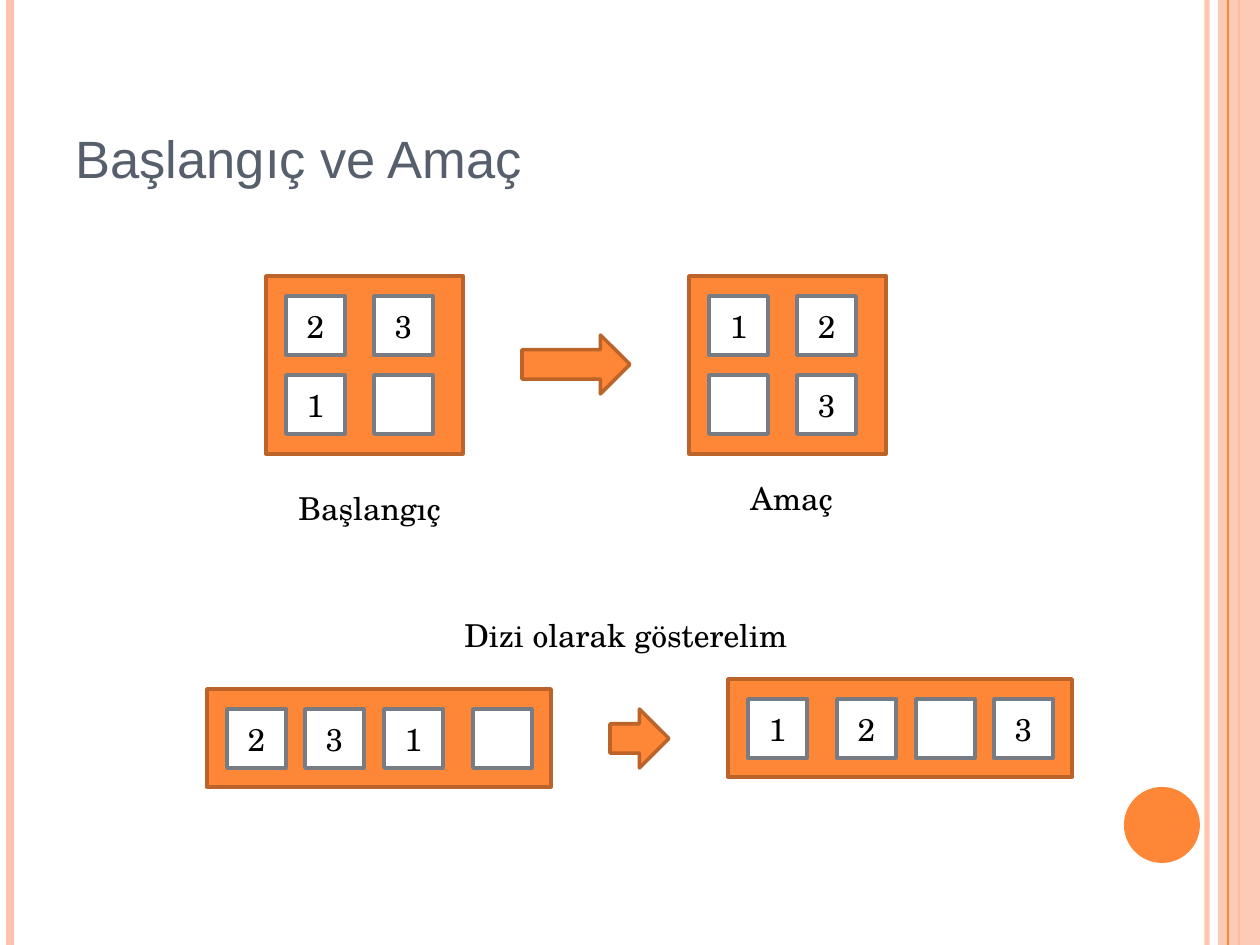
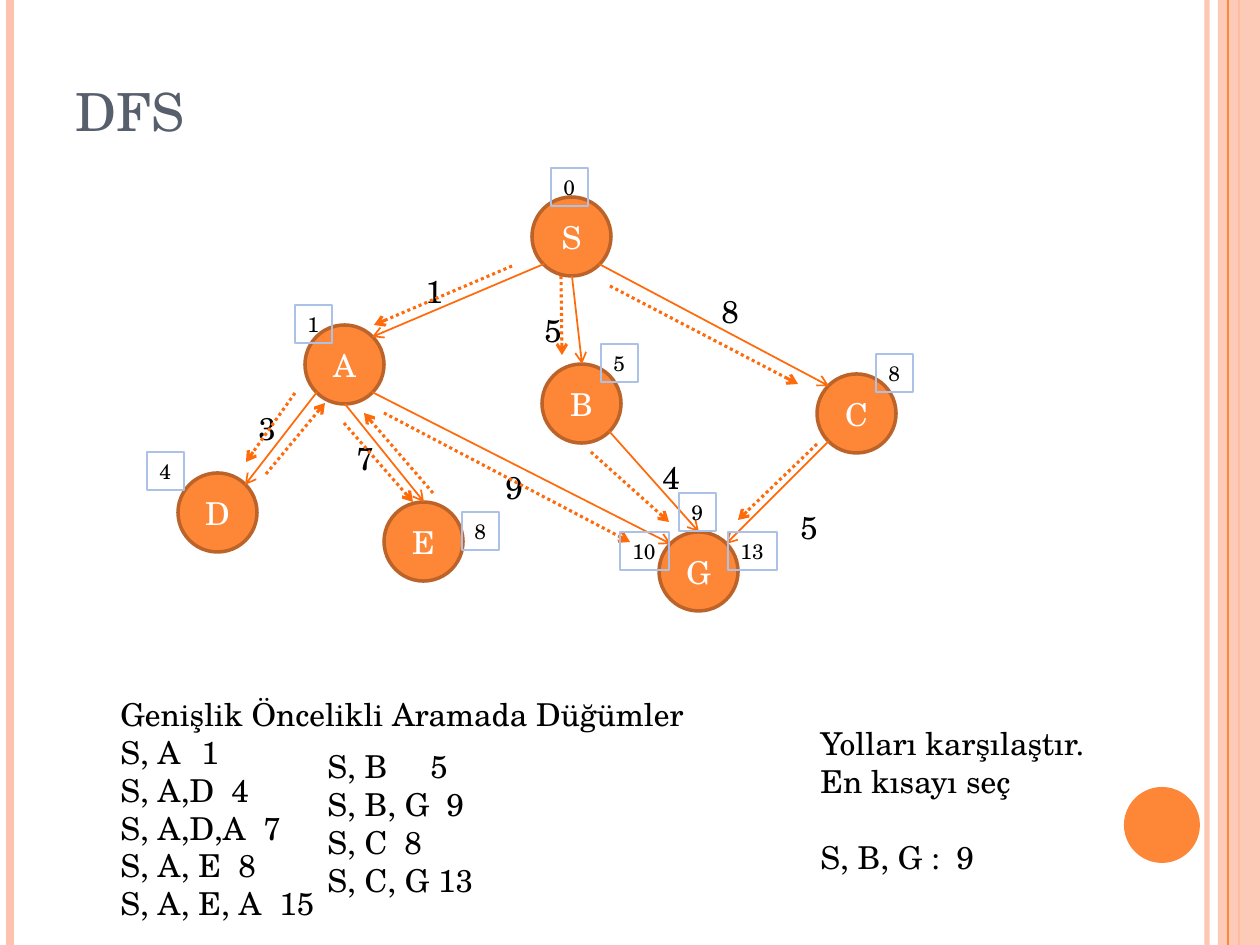
from lxml.etree import SubElement
from pptx import Presentation
from pptx.dml.color import RGBColor
from pptx.enum.dml import MSO_LINE
from pptx.enum.shapes import MSO_CONNECTOR, MSO_SHAPE
from pptx.enum.text import MSO_ANCHOR, MSO_AUTO_SIZE, PP_ALIGN
from pptx.oxml.ns import qn
from pptx.util import Emu, Pt

PX = 914400 / 126
WIDTH, HEIGHT = 1260, 945
SERIF = "TeX Gyre Schola"
COLORS = {
    "orange": "FE8637", "rust": "BC6329", "edge": "FF6B0A", "peach": "FEC3AE",
    "slate": "575F6D", "gray": "777C84", "blue": "ACC1E8",
    "white": "FFFFFF", "black": "000000",
}
RGB = {name: RGBColor.from_string(value) for name, value in COLORS.items()}


def add_box(page, kind, frame, text="", fill=None, border=None, weight=2, size=18, color="black"):
    """Add a preset shape with centred text, or a text box when kind is None."""
    frame = [Emu(round(value * PX)) for value in frame]
    if kind is None:
        box = page.shapes.add_textbox(*frame)
        box.text_frame.word_wrap = False
        box.text_frame.auto_size = MSO_AUTO_SIZE.SHAPE_TO_FIT_TEXT
    else:
        box = page.shapes.add_shape(kind, *frame)
        box.shadow.inherit = False
        box.text_frame.vertical_anchor = MSO_ANCHOR.MIDDLE
    if fill:
        box.fill.solid()
        box.fill.fore_color.rgb = RGB[fill]
    if border:
        box.line.color.rgb = RGB[border]
        box.line.width = Pt(weight)
    else:
        box.line.fill.background()
    if text:
        box.text_frame.text = text
    for para in box.text_frame.paragraphs:
        para.alignment = PP_ALIGN.LEFT if kind is None else PP_ALIGN.CENTER
        for span in para.runs:
            span.font.name = SERIF
            span.font.size = Pt(size)
            span.font.color.rgb = RGB[color]
    return box


def add_line(page, start, end, color, weight, arrow=False, dotted=False):
    points = [Emu(round(value * PX)) for value in (*start, *end)]
    line = page.shapes.add_connector(MSO_CONNECTOR.STRAIGHT, *points)
    line.line.color.rgb = RGB[color]
    line.line.width = Pt(weight)
    if dotted:
        line.line.dash_style = MSO_LINE.ROUND_DOT
    if arrow:
        SubElement(line.line._get_or_add_ln(), qn("a:tailEnd"), type="arrow")
    SubElement(line._element.spPr, qn("a:effectLst"))
    return line


deck = Presentation()
deck.slide_width = Emu(round(WIDTH * PX))
deck.slide_height = Emu(round(HEIGHT * PX))
layout = deck.slide_layouts[5]

# Pages and titles
pages = []
for title_text, font, title_height in [("Başlangıç ve Amaç", "Arial", 157), ("DFS", SERIF, 110)]:
    page = deck.slides.add_slide(layout)
    title = page.shapes.title
    title.left, title.top, title.width, title.height = [
        Emu(round(value * PX)) for value in (63, 38, 1029, title_height)]
    title.text_frame.text = title_text
    title.text_frame.vertical_anchor = MSO_ANCHOR.BOTTOM
    title.text_frame.auto_size = MSO_AUTO_SIZE.NONE
    para = title.text_frame.paragraphs[0]
    para.alignment = PP_ALIGN.LEFT
    span = para.runs[0]
    span.font.name = font
    span.font.size = Pt(30)
    span.font.color.rgb = RGB["slate"]
    if font == SERIF:
        span.font._element.set("cap", "small")
    pages.append(page)
puzzle_page, search_page = pages

# Shared side bands and disc, moved from the first page to the layout
stripe = add_line(puzzle_page, (1207, 0), (1207, HEIGHT), "peach", 3)
left_stripe = add_line(puzzle_page, (10, 0), (10, HEIGHT), "peach", 4.5)
outer_rule = add_line(puzzle_page, (1239, 0), (1239, HEIGHT), "orange", 1.5)
band = add_box(puzzle_page, MSO_SHAPE.RECTANGLE, (1218, 0, 42, HEIGHT), fill="peach")
inner_rule = add_line(puzzle_page, (1228, 0), (1228, HEIGHT), "orange", 0.75)
disc = add_box(puzzle_page, MSO_SHAPE.OVAL, (1124, 787, 76, 76), fill="orange")
for shape, opacity in [(stripe, 93000), (band, 87000)]:
    for color in shape._element.spPr.iter(qn("a:srgbClr")):
        SubElement(color, qn("a:alpha"), val=str(opacity))
for shape in (stripe, left_stripe, outer_rule, band, inner_rule, disc):
    layout.shapes._spTree.append(shape._element)

# Puzzle boards as squares and as arrays; "-" is the empty tile
TILE = 59
square = [(x, y) for y in (20, 99) for x in (20, 108)]
start_row = [(x, 20) for x in (20, 98, 177, 266)]
goal_row = [(x, 20) for x in (20, 109, 188, 266)]
boards = [
    ((266, 276, 197, 178), square, "231-"),
    ((689, 276, 197, 178), square, "12-3"),
    ((207, 689, 344, 98), start_row, "231-"),
    ((728, 679, 344, 98), goal_row, "12-3"),
]
for frame, offsets, numbers in boards:
    add_box(puzzle_page, MSO_SHAPE.RECTANGLE, frame, fill="orange", border="rust")
    for (x, y), number in zip(offsets, numbers):
        add_box(puzzle_page, MSO_SHAPE.RECTANGLE, (frame[0] + x, frame[1] + y, TILE, TILE),
                number.strip("-"), fill="white", border="gray")
for frame in [(522, 335, 108, TILE), (610, 709, TILE, TILE)]:
    add_box(puzzle_page, MSO_SHAPE.RIGHT_ARROW, frame, fill="orange", border="rust")
for frame, caption in [
    ((286, 483, 169, 50), "Başlangıç"),
    ((738, 473, 108, 50), "Amaç"),
    ((452, 610, 352, 50), "Dizi olarak gösterelim"),
]:
    add_box(puzzle_page, None, frame, caption)

# Search graph nodes
NODE = 79
nodes = {"S": (532, 197), "A": (305, 325), "E": (384, 502), "C": (817, 374),
         "D": (178, 473), "G": (659, 532), "B": (542, 364)}
for name, corner in nodes.items():
    add_box(search_page, MSO_SHAPE.OVAL, (*corner, NODE, NODE), name,
            fill="orange", border="rust", color="white")

# Edges run between points on the rims of the nodes
rim = {"top": (40, 0), "bottom": (40, 79), "top left": (12, 12), "top right": (67, 12),
       "bottom left": (12, 67), "bottom right": (67, 67)}
edges = [
    ("S", "bottom left", "A", "top right"), ("S", "bottom", "B", "top"),
    ("S", "bottom right", "C", "top left"), ("A", "bottom left", "D", "top right"),
    ("A", "bottom", "E", "top"), ("A", "bottom right", "G", "top left"),
    ("B", "bottom right", "G", "top"), ("C", "bottom left", "G", "top right"),
]
for parent, leave, child, enter in edges:
    start = [a + b for a, b in zip(nodes[parent], rim[leave])]
    end = [a + b for a, b in zip(nodes[child], rim[enter])]
    add_line(search_page, start, end, "edge", 1, arrow=True)

# Edge weights
for x, y, weight in [(413, 266, 1), (532, 305, 5), (709, 286, 8), (788, 502, 5),
                     (650, 452, 4), (493, 462, 9), (344, 433, 7), (246, 403, 3)]:
    add_box(search_page, None, (x, y, 43, 50), str(weight))

# Dotted steps of the search, forward and back
for start, end in [
    ((512, 266), (374, 325)), ((561, 276), (562, 355)), ((610, 286), (798, 384)),
    ((295, 393), (246, 462)), ((344, 423), (413, 502)), ((384, 413), (630, 542)),
    ((591, 452), (669, 522)), ((817, 444), (738, 520)),
    ((266, 474), (325, 403)), ((433, 493), (364, 413)),
]:
    add_line(search_page, start, end, "edge", 1.75, arrow=True, dotted=True)

# Total cost beside each node
for x, y, cost in [(551, 168, "0"), (295, 305, "1"), (147, 452, "4"), (601, 344, "5"),
                   (462, 512, "8"), (620, 532, "10"), (679, 493, "9"), (876, 354, "8"),
                   (728, 532, "13")]:
    add_box(search_page, None, (x, y, 25 + 12 * len(cost), 38), cost,
            border="blue", weight=0.75, size=12)

# Path lists: each line has the tab position of its cost, or None
path_lists = [
    ((108, 689, 630, 242), True, [
        ("Genişlik Öncelikli Aramada Düğümler", None), ("S, A\t1", 81), ("S, A,D\t4", 111),
        ("S, A,D,A\t7", 143), ("S, A, E\t8", 118), ("S, A, E, A\t15", 159)]),
    ((315, 741, 630, 165), True, [
        ("S, B\t5", 103), ("S, B, G\t9", 119), ("S, C\t8", 77), ("S, C, G 13", None)]),
    ((808, 718, 297, 165), False, [
        ("Yolları karşılaştır.", None), ("En kısayı seç", None), ("S, B, G :\t9", 136)]),
]
for frame, wrap, lines in path_lists:
    box = add_box(search_page, None, frame, "\n".join(text for text, stop in lines))
    box.text_frame.word_wrap = wrap
    for para, (text, stop) in zip(box.text_frame.paragraphs, lines):
        if stop:
            tabs = SubElement(para._p.get_or_add_pPr(), qn("a:tabLst"))
            SubElement(tabs, qn("a:tab"), pos=str(round(stop * PX)), algn="l")
# The last paragraph of the last list is the chosen path
para.space_before = Pt(21.6)

deck.save("out.pptx")
